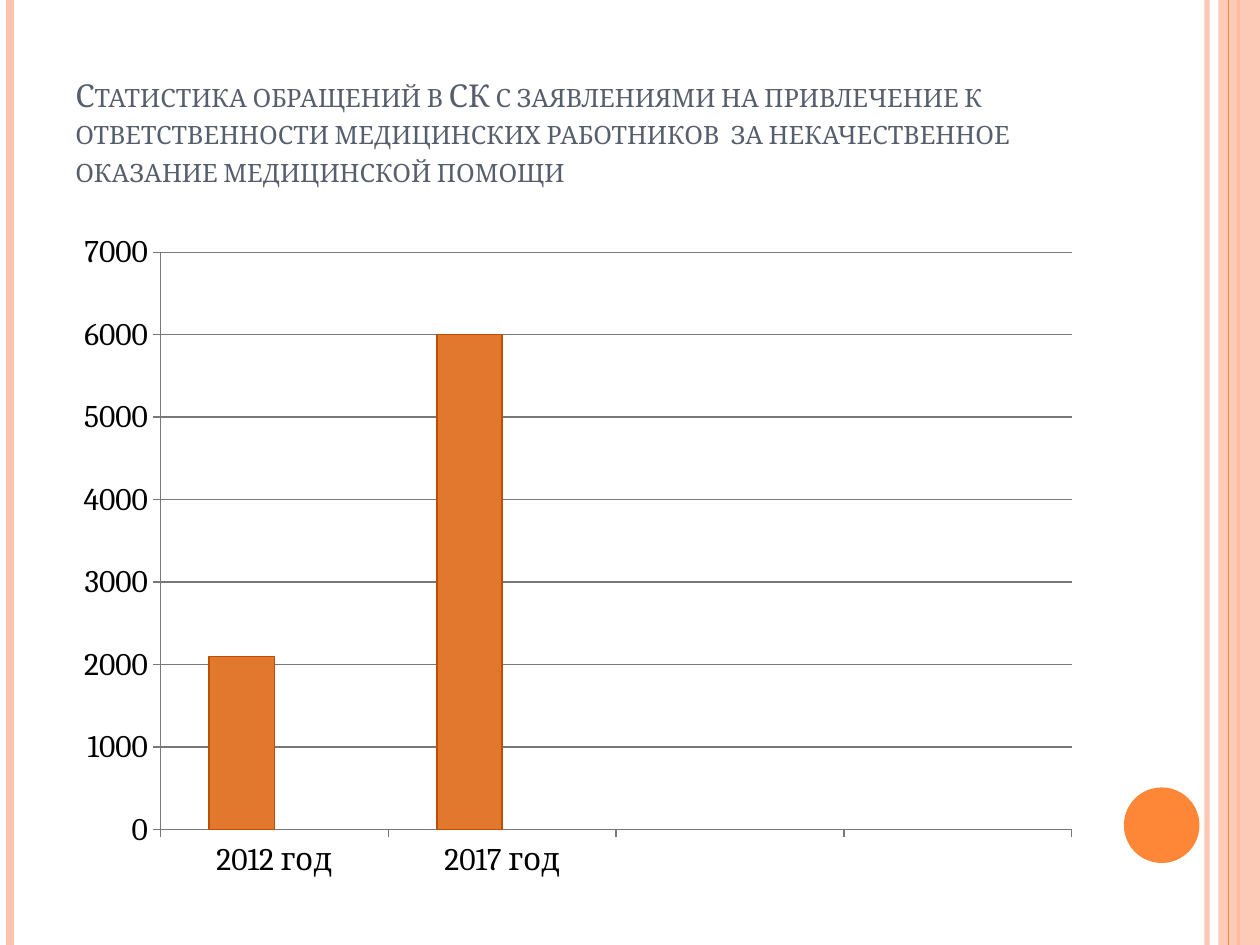
import pptx
import pptx.chart.data
import pptx.dml.color
import pptx.enum.chart
import pptx.enum.shapes
import pptx.enum.text
import pptx.oxml.ns
import pptx.util
from lxml import etree

deck = pptx.Presentation()
deck.slide_width = W = pptx.util.Inches(10)
deck.slide_height = H = pptx.util.Inches(7.5)
slide = deck.slides.add_slide(deck.slide_layouts[6])
shapes = slide.shapes
qn = pptx.oxml.ns.qn
FONT = "Cambria"
PEACH, ORANGE = "FEC3AE", "FE8637"
CHART_LINE = pptx.util.Pt(0.8)


def paint(color_format, value, opacity=100):
    color_format.rgb = pptx.dml.color.RGBColor.from_string(value)
    if opacity < 100:
        for color in color_format._xFill.iter(qn("a:srgbClr")):
            etree.SubElement(color, qn("a:alpha"), val=str(opacity * 1000))


def stripe(x_share, color, weight, opacity=100):
    x = int(W * x_share)
    line = shapes.add_connector(pptx.enum.shapes.MSO_CONNECTOR.STRAIGHT, x, 0, x, H)
    line.line.width = pptx.util.Pt(weight)
    line.line.fill.solid()
    paint(line.line.color, color, opacity)
    etree.SubElement(line._element.spPr, qn("a:effectLst"))


# Side stripes, the band on the right edge and the page disc
stripe(0.958, PEACH, 3, 93)
stripe(0.008, PEACH, 4.5)
stripe(0.983, ORANGE, 1.5)

kinds = pptx.enum.shapes.MSO_SHAPE
for kind, left, top, width, height, color, opacity in (
    (kinds.RECTANGLE, 0.967, 0, 0.033, 1, PEACH, 87),
    (kinds.OVAL, 0.892, 0.8333, 0.06, 0.08, ORANGE, 100),
):
    decoration = shapes.add_shape(
        kind, int(W * left), int(H * top), int(W * width), int(H * height))
    decoration.shadow.inherit = False
    decoration.fill.solid()
    paint(decoration.fill.fore_color, color, opacity)
    decoration.line.fill.background()

stripe(0.975, ORANGE, 0.75)

# Title in small capitals
content_left, content_width = int(W * 0.05), int(W * 0.817)
title = shapes.add_textbox(content_left, int(H * 0.04), content_width, int(H * 0.1667)).text_frame
title.word_wrap = True
title.vertical_anchor = pptx.enum.text.MSO_ANCHOR.BOTTOM
heading = title.paragraphs[0].add_run()
heading.text = ("Статистика обращений в СК с заявлениями на привлечение к "
                "ответственности медицинских работников  за некачественное "
                "оказание медицинской помощи")
heading.font.name = FONT
heading.font.size = pptx.util.Pt(18)
paint(heading.font.color, "575F6D")
heading.font._element.set("cap", "small")

# Column chart: two years, with room for two more
appeals = pptx.chart.data.CategoryChartData()
appeals.categories = ["2012 год", "2017 год", "", ""]
appeals.add_series("Series 1", (2100, 6000, None, None))
appeals.add_series("Series 2", (None, None, None, None))
chart = shapes.add_chart(
    pptx.enum.chart.XL_CHART_TYPE.COLUMN_CLUSTERED,
    content_left, int(H * 0.2333), content_width, int(H * 0.711), appeals).chart
chart.has_title = False
chart.has_legend = False
chart.font.name = FONT
chart.font.size = pptx.util.Pt(18)
paint(chart.font.color, "000000")

columns = chart.plots[0]
columns.gap_width = 150
columns.overlap = 0
columns.vary_by_categories = False
for series, fill, edge in zip(columns.series, ("E2772E", "7598D9"), ("BE4F00", "7598D9")):
    series.format.fill.solid()
    paint(series.format.fill.fore_color, fill)
    paint(series.format.line.color, edge)
    series.format.line.width = CHART_LINE

# Axes and gridlines
years, counts = chart.category_axis, chart.value_axis
counts.minimum_scale, counts.maximum_scale, counts.major_unit = 0, 7000, 1000
counts.has_major_gridlines = True
for axis in (years, counts):
    axis.major_tick_mark = pptx.enum.chart.XL_TICK_MARK.OUTSIDE
    axis.minor_tick_mark = pptx.enum.chart.XL_TICK_MARK.NONE
for ruled in (years, counts, counts.major_gridlines):
    paint(ruled.format.line.color, "787878")
    ruled.format.line.width = CHART_LINE

deck.save("out.pptx")
